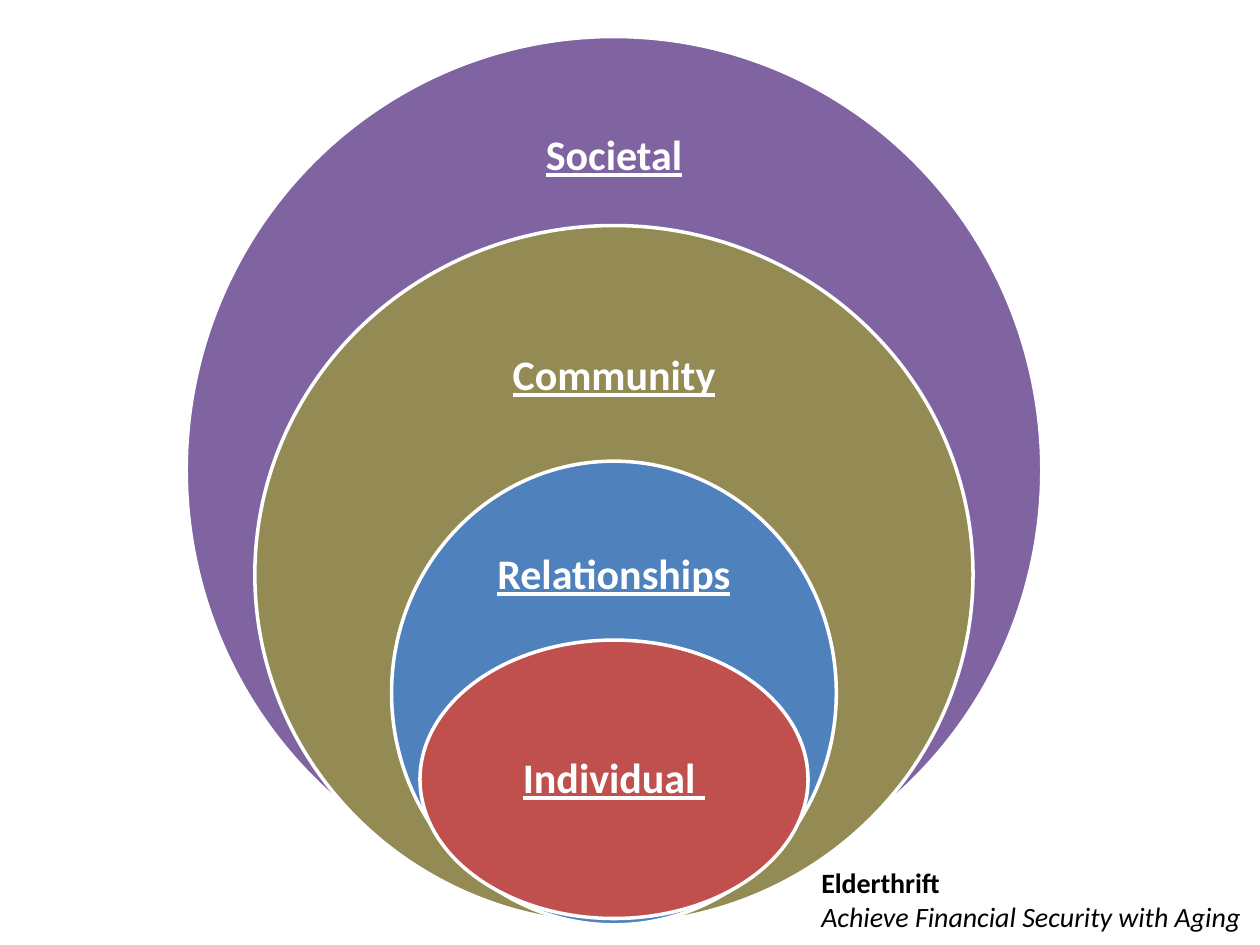
from pptx import Presentation
from pptx.dml.color import RGBColor
from pptx.enum.shapes import MSO_SHAPE
from pptx.enum.text import MSO_ANCHOR, PP_ALIGN
from pptx.util import Inches, Pt

HEX = {
    "societal": "8064A2",
    "community": "948A54",
    "relations": "4F81BD",
    "person": "C0504D",
    "white": "FFFFFF",
    "black": "000000",
}
WIDE, HIGH = Inches(10), Inches(7.5)
COLS, ROWS = 100, 75
AXIS = 48.73
RINGS = [
    ("societal", 2.9, 67.9, 68.8),
    ("community", 17.9, 57, 55.4),
    ("relations", 36.6, 35.3, 36.8),
    ("person", 50.8, 30.8, 22.1),
]
LABELS = [
    ("Community", 27.2, 37.5, 7.5),
    ("Societal", 9.7, 39.2, 10.8),
    ("Relationships", 43, 33.3, 5),
]
TITLE = {"name": "Calibri", "size": Pt(24), "bold": True, "underline": True}
BRAND = {"name": "Calibri", "size": Pt(16), "bold": True}
MOTTO = {"name": "Calibri", "size": Pt(16), "italic": True}


def color(key):
    """Return the named palette colour."""
    return RGBColor.from_string(HEX[key])


def place(left, top, width, height):
    """Turn grid columns and rows into slide lengths."""
    col, row = WIDE / COLS, HIGH / ROWS
    return int(left * col), int(top * row), int(width * col), int(height * row)


def center(top, width, height):
    """Place a box centred on the shared axis."""
    return place(AXIS - width / 2, top, width, height)


def assign(item, values):
    """Set each attribute held in a dict."""
    for key, value in values.items():
        setattr(item, key, value)


def add_ring(shapes, key, top, width, height):
    """Draw one white-edged ellipse on the axis."""
    ring = shapes.add_shape(MSO_SHAPE.OVAL, *center(top, width, height))
    ring.shadow.inherit = False
    ring.fill.solid()
    ring.fill.fore_color.rgb = color(key)
    ring.line.color.rgb = color("white")
    ring.line.width = Pt(2)


def add_text(shapes, box, lines, tint, align):
    """Write styled lines in a box and return its frame."""
    frame = shapes.add_textbox(*box).text_frame
    frame.word_wrap = True
    for index, (words, style) in enumerate(lines):
        para = frame.add_paragraph() if index else frame.paragraphs[0]
        para.alignment = align
        run = para.add_run()
        run.text = words
        assign(run.font, style)
        run.font.color.rgb = color(tint)
    return frame


def add_label(shapes, words, top, width, height):
    """Write an underlined ring title on the axis."""
    box = center(top, width, height)
    return add_text(shapes, box, [(words, TITLE)], "white", PP_ALIGN.CENTER)


def add_core(shapes):
    """Write the title of the innermost ring."""
    frame = add_label(shapes, "Individual ", 56.4, 21.8, 11)
    sides = ("left", "right", "top", "bottom")
    assign(frame, {f"margin_{side}": Inches(0.19) for side in sides})
    frame.vertical_anchor = MSO_ANCHOR.MIDDLE
    frame.paragraphs[0].line_spacing = 0.9


def main():
    """Build the nested rings slide and save it."""
    deck = Presentation()
    assign(deck, {"slide_width": WIDE, "slide_height": HIGH})
    shapes = deck.slides.add_slide(deck.slide_layouts[6]).shapes
    group = shapes.add_group_shape().shapes
    for ring in RINGS:
        add_ring(group, *ring)
    add_core(group)
    for label in LABELS:
        add_label(shapes, *label)
    lines = [("Elderthrift", BRAND), ("Achieve Financial Security with Aging", MOTTO)]
    add_text(shapes, place(64.2, 68.2, 55, 6.5), lines, "black", PP_ALIGN.LEFT)
    deck.save("out.pptx")


if __name__ == "__main__":
    main()
